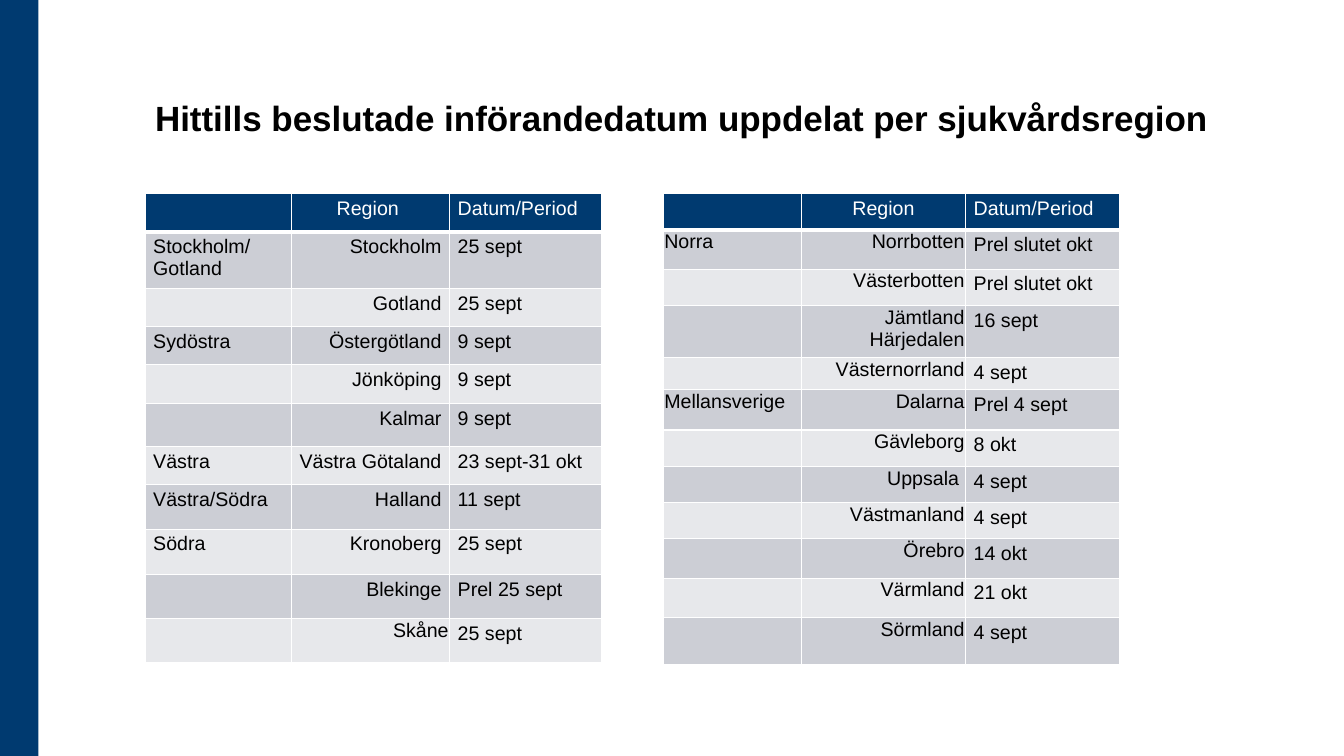
from lxml.etree import SubElement
from pptx import Presentation
from pptx.dml.color import RGBColor
from pptx.enum.shapes import MSO_SHAPE
from pptx.enum.text import MSO_ANCHOR, PP_ALIGN
from pptx.oxml.ns import qn
from pptx.util import Inches, Pt

COLORS = {"navy": "003A70", "dark": "CCCED5", "light": "E7E8EB",
          "white": "FFFFFF", "black": "000000"}
ALIGNS = (PP_ALIGN.LEFT, PP_ALIGN.RIGHT, PP_ALIGN.LEFT)
HEAD = (PP_ALIGN.LEFT, PP_ALIGN.CENTER, PP_ALIGN.LEFT)
LOOSE = {"margin_left": Inches(0.08), "margin_right": Inches(0.08),
         "margin_top": Inches(0.04), "margin_bottom": Inches(0.04)}
TIGHT = {**LOOSE, "margin_left": Inches(0.01), "margin_right": Inches(0.01),
         "margin_top": Inches(0.01)}

SOUTH = [
    ("", "Region ", "Datum/Period"),
    ("Stockholm/\nGotland", "Stockholm", "25 sept"),
    ("", "Gotland", "25 sept"),
    ("Sydöstra", "Östergötland", "9 sept"),
    ("", "Jönköping", "9 sept"),
    ("", "Kalmar", "9 sept"),
    ("Västra", "Västra Götaland", "23 sept-31 okt"),
    ("Västra/Södra", "Halland", "11 sept"),
    ("Södra", "Kronoberg", "25 sept"),
    ("", "Blekinge", "Prel 25 sept"),
    ("", "Skåne", "25 sept"),
]
NORTH = [
    ("", "Region", "Datum/Period"),
    ("Norra", "Norrbotten", "Prel slutet okt"),
    ("", "Västerbotten", "Prel slutet okt"),
    ("", "Jämtland Härjedalen", "16 sept"),
    ("", "Västernorrland", "4 sept"),
    ("Mellansverige", "Dalarna", "Prel 4 sept"),
    ("", "Gävleborg", "8 okt"),
    ("", "Uppsala ", "4 sept"),
    ("", "Västmanland", "4 sept"),
    ("", "Örebro", "14 okt"),
    ("", "Värmland", "21 okt"),
    ("", "Sörmland", "4 sept"),
]


def apply(target, values):
    for name, value in values.items():
        setattr(target, name, value)


class Deck:
    """Draw on one slide, with lengths as percent of its width and height."""

    def __init__(self):
        self.show = Presentation()
        apply(self.show, {"slide_width": Inches(13.333), "slide_height": Inches(7.5)})
        self.slide = self.show.slides.add_slide(self.show.slide_layouts[6])

    def col(self, share):
        return round(self.show.slide_width * share / 100)

    def row(self, share):
        return round(self.show.slide_height * share / 100)

    def box(self, left, top, width, height):
        return self.col(left), self.row(top), self.col(width), self.row(height)

    def paint(self, fill, color):
        fill.solid()
        fill.fore_color.rgb = RGBColor.from_string(COLORS[color])

    def label(self, frame, text, size, color, align, bold=False):
        frame.text = text
        for para in frame.paragraphs:
            para.alignment = align
            for run in para.runs:
                apply(run.font, {"name": "Arial", "size": Pt(size), "bold": bold})
                run.font.color.rgb = RGBColor.from_string(COLORS[color])
            if not para.runs:
                SubElement(para._p, qn("a:endParaRPr"), sz=str(size * 100))

    def bar(self, *area):
        bar = self.slide.shapes.add_shape(MSO_SHAPE.RECTANGLE, *self.box(*area))
        bar.shadow.inherit = False
        self.paint(bar.fill, "navy")
        bar.line.fill.background()

    def title(self, text, *area):
        frame = self.slide.shapes.add_textbox(*self.box(*area)).text_frame
        apply(frame, {"word_wrap": True, "vertical_anchor": MSO_ANCHOR.BOTTOM,
                      "margin_bottom": self.row(5.8)})
        self.label(frame, text, 25, "black", PP_ALIGN.LEFT, True)

    def edge(self, cell, head):
        props = cell._tc.get_or_add_tcPr()
        for side in "LRTB":
            width = Pt(3 if head and side == "B" else 1)
            line = SubElement(props, qn(f"a:ln{side}"), w=str(int(width)))
            fill = SubElement(line, qn("a:solidFill"))
            SubElement(fill, qn("a:srgbClr"), val=COLORS["white"])

    def table(self, data, left, top, cols, rows, tight):
        area = self.box(left, top, sum(cols), sum(rows))
        table = self.slide.shapes.add_table(len(rows), len(cols), *area).table
        apply(table, {"first_row": False, "horz_banding": False})
        for column, width in zip(table.columns, cols):
            column.width = self.col(width)
        for r, (texts, height) in enumerate(zip(data, rows)):
            table.rows[r].height = self.row(height)
            back = ("dark" if r % 2 else "light") if r else "navy"
            for c, text in enumerate(texts):
                cell = table.cell(r, c)
                apply(cell, TIGHT if r >= tight and c < 2 else LOOSE)
                self.edge(cell, r == 0)
                self.paint(cell.fill, back)
                align = ALIGNS[c] if r else HEAD[c]
                self.label(cell.text_frame, text, 14, "black" if r else "white", align)


def main():
    deck = Deck()
    deck.bar(0, 0, 2.85, 100)
    deck.title("Hittills beslutade införandedatum uppdelat per sjukvårdsregion",
               10.8, 4.8, 81.22, 19.33)
    deck.table(SOUTH, 10.8, 25.6, (10.88, 11.78, 11.32),
               (5.07, 7.47, 5.07, 5.07, 5.07, 5.73, 5.07, 5.87, 6, 5.87, 5.73), 10)
    deck.table(NORTH, 49.35, 25.6, (10.28, 12.22, 11.48),
               (4.8, 5.2, 4.8, 6.8, 4.27, 5.33, 4.8, 4.8, 4.8, 5.2, 5.2, 6.27), 1)
    deck.show.save("out.pptx")


if __name__ == "__main__":
    main()
